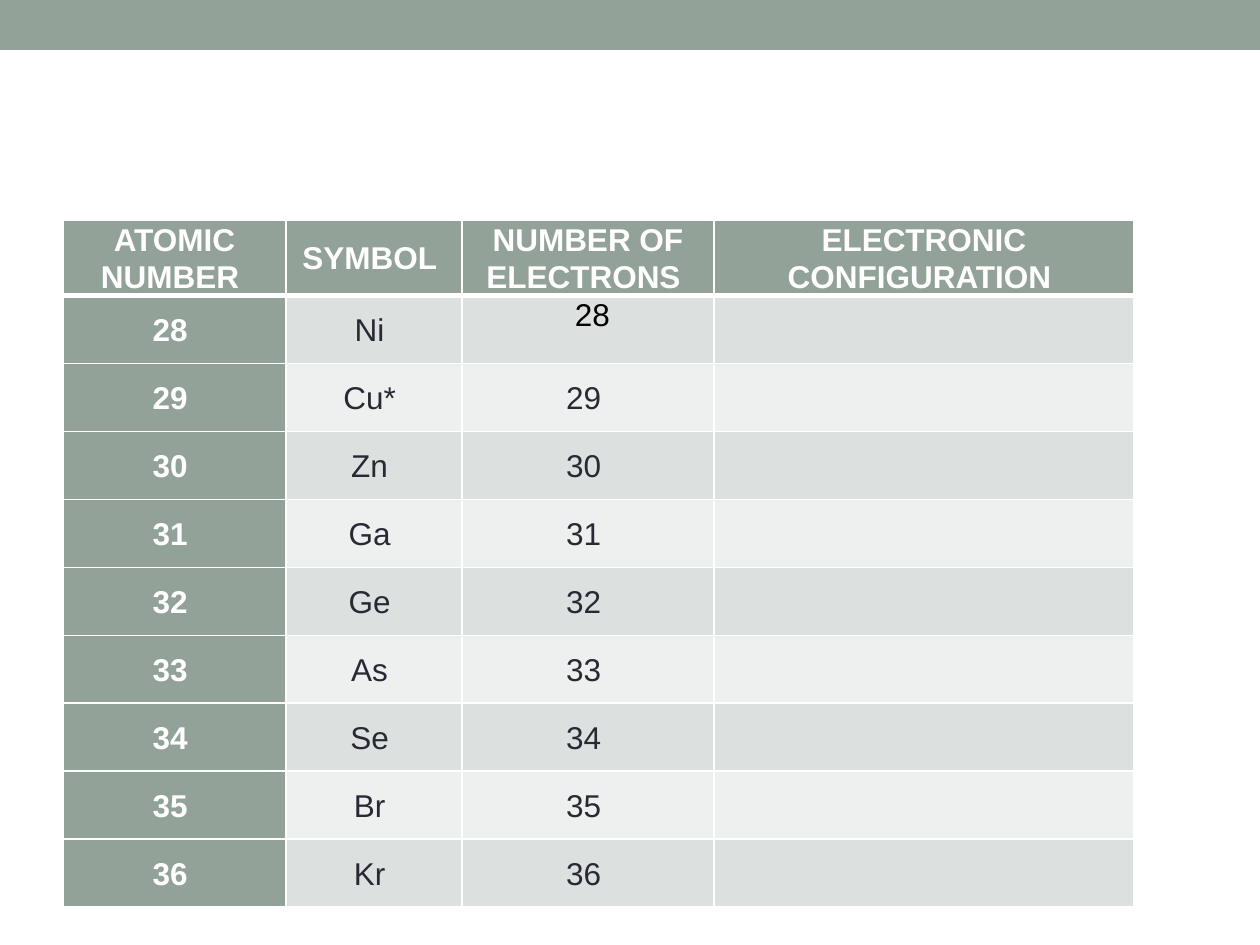
"""Build a slide with a table of atomic numbers, symbols and electron counts."""
from lxml.etree import SubElement
from pptx import Presentation
from pptx.dml.color import RGBColor as RGB
from pptx.enum.shapes import MSO_SHAPE as SHAPE
from pptx.enum.text import MSO_ANCHOR as ANCHOR, PP_ALIGN as ALIGN
from pptx.oxml.ns import qn
from pptx.util import Pt

HEADERS = ["ATOMIC NUMBER", "SYMBOL", "NUMBER OF ELECTRONS", "ELECTRONIC CONFIGURATION"]
FIRST_NUMBER = 28
SYMBOLS = ["Ni", "Cu*", "Zn", "Ga", "Ge", "As", "Se", "Br", "Kr"]
COLORS = {"sage": "93A299", "odd": "DCE0DE", "even": "EEF0EF",
          "white": "FFFFFF", "ink": "292934", "black": "000000"}
COLUMN_WIDTHS = [223, 176, 252, 420]
ROW_HEIGHT = 68
TABLE_LEFT, TABLE_TOP = 63, 220
PAGE_WIDTH, PAGE_HEIGHT, BAR_HEIGHT = 1260, 945, 50
LEFT_INDENT = 113


def px(length):
    return round(length * 914400 / 126)


def color(name):
    return RGB.from_string(COLORS[name])


def write(cell, text, ink="ink", bold=False, align=ALIGN.CENTER, anchor=ANCHOR.MIDDLE, indent=0):
    cell.margin_left = cell.margin_right = cell.margin_top = cell.margin_bottom = 0
    cell.vertical_anchor = anchor
    para = cell.text_frame.paragraphs[0]
    para.alignment = align
    para.line_spacing = 1.07
    if indent:
        para._p.get_or_add_pPr().set("marL", str(px(indent)))
    span = para.add_run()
    span.text = text
    span.font.name, span.font.size, span.font.bold = "Arial", Pt(18), bold
    span.font.color.rgb = color(ink)


def style(cell, fill, top=1, bottom=1):
    cell.fill.solid()
    cell.fill.fore_color.rgb = color(fill)
    properties = cell._tc.get_or_add_tcPr()
    for place, (side, width) in enumerate([("L", 1), ("R", 1), ("T", top), ("B", bottom)]):
        line = SubElement(properties, qn(f"a:ln{side}"), w=str(Pt(width)))
        SubElement(SubElement(line, qn("a:solidFill")), qn("a:srgbClr"), val=COLORS["white"])
        properties.insert(place, line)


def add_bar(page):
    bar = page.shapes.add_shape(SHAPE.RECTANGLE, 0, 0, px(PAGE_WIDTH), px(BAR_HEIGHT))
    bar.shadow.inherit = False
    bar.fill.solid()
    bar.fill.fore_color.rgb = color("sage")
    bar.line.fill.background()


def add_elements(page):
    rows = len(SYMBOLS) + 1
    table = page.shapes.add_table(rows, len(HEADERS), px(TABLE_LEFT), px(TABLE_TOP),
                                  px(sum(COLUMN_WIDTHS)), px(ROW_HEIGHT * rows)).table
    for column, width in zip(table.columns, COLUMN_WIDTHS):
        column.width = px(width)
    for row in table.rows:
        row.height = px(ROW_HEIGHT)
    for index, header in enumerate(HEADERS):
        cell = table.cell(0, index)
        write(cell, f"{header} ", ink="white", bold=True)
        style(cell, "sage", bottom=3)
    for row, symbol in enumerate(SYMBOLS, 1):
        number = FIRST_NUMBER + row - 1
        band = "odd" if row % 2 else "even"
        for index, fill in enumerate(["sage", band, band, band]):
            style(table.cell(row, index), fill, top=3 if row == 1 else 1)
        write(table.cell(row, 0), f"{number} ", ink="white", bold=True)
        write(table.cell(row, 1), f"{symbol} ")
        if row == 1:
            write(table.cell(row, 2), str(number), ink="black", align=ALIGN.LEFT,
                  anchor=ANCHOR.TOP, indent=LEFT_INDENT)
        else:
            write(table.cell(row, 2), f"{number} ")


def main():
    deck = Presentation()
    deck.slide_width, deck.slide_height = px(PAGE_WIDTH), px(PAGE_HEIGHT)
    page = deck.slides.add_slide(deck.slide_layouts[6])
    add_bar(page)
    add_elements(page)
    deck.save("out.pptx")


if __name__ == "__main__":
    main()
